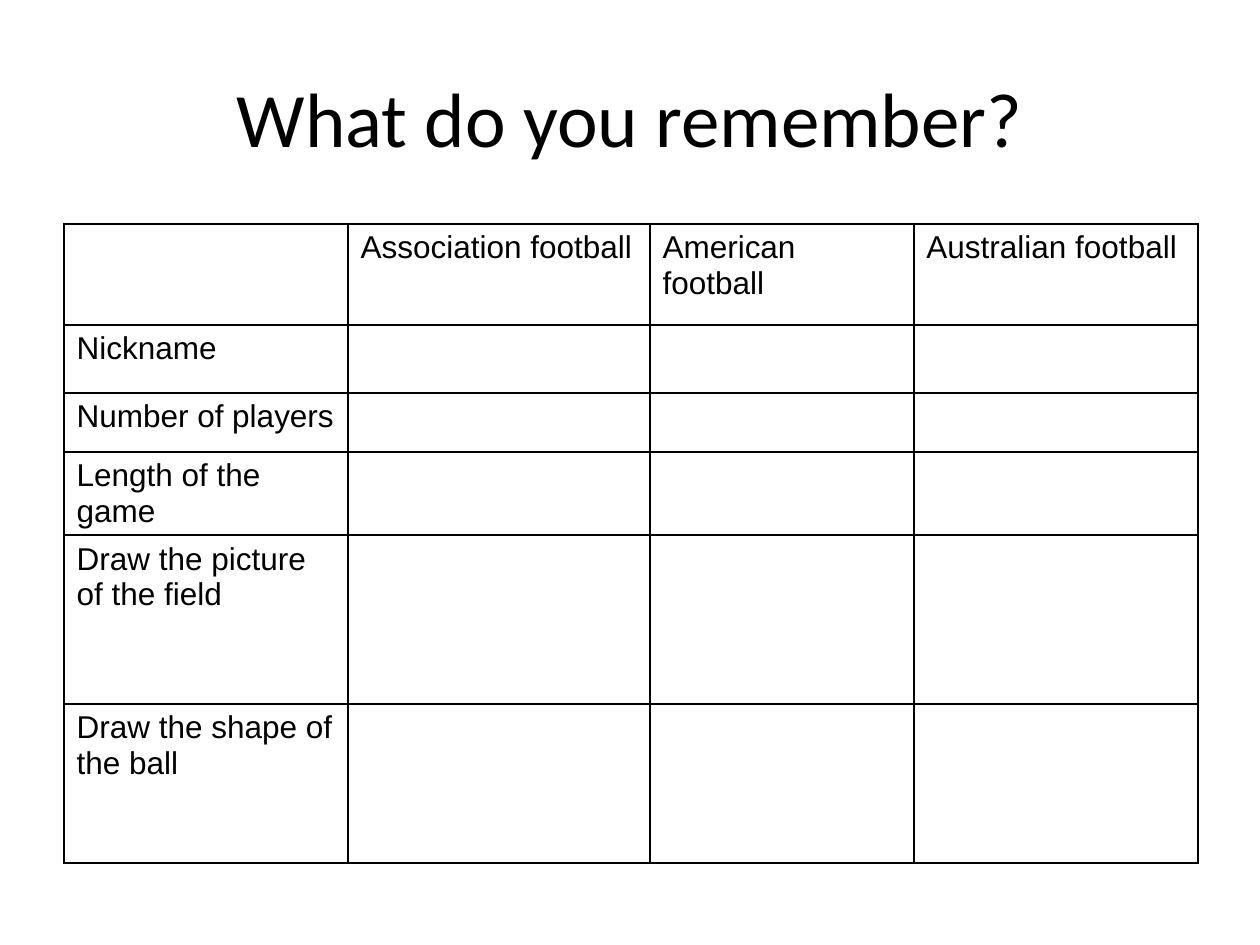
from lxml.etree import SubElement
from pptx import Presentation
from pptx.dml.color import RGBColor
from pptx.enum.text import MSO_ANCHOR, PP_ALIGN
from pptx.oxml.ns import qn
from pptx.util import Emu, Pt

SCALE = 914400 / 126
INK = "000000"
PAPER = "FFFFFF"
HEADS = ["", "Association football", "American football", "Australian football"]
LABELS = ["Nickname", "Number of players", "Length of the game",
          "Draw the picture of the field", "Draw the shape of the ball"]
WIDTHS = [284, 302, 264, 284]
HEIGHTS = [101, 68, 59, 59, 169, 159]


def px(count):
    return Emu(round(count * SCALE))


def color(code):
    return RGBColor.from_string(code)


def apply(item, values):
    for name, value in values.items():
        setattr(item, name, value)


class Deck:
    title_font = {"name": "Calibri", "size": Pt(44)}
    cell_font = {"name": "Arial", "size": Pt(18), "bold": False}
    line = Pt(1)

    def __init__(self, wide, high):
        self.file = Presentation()
        apply(self.file, {"slide_width": px(wide), "slide_height": px(high)})
        self.slide = self.file.slides.add_slide(self.file.slide_layouts[5])

    def label(self, frame, text, font):
        para = frame.paragraphs[0]
        para.text = text
        apply(para.font, font)
        for run in para.runs:
            apply(run.font, font)
            run.font.color.rgb = color(INK)
        return para

    def title(self, text, left, top, wide, high):
        shape = self.slide.shapes.title
        apply(shape, {"left": px(left), "top": px(top),
                      "width": px(wide), "height": px(high)})
        frame = shape.text_frame
        apply(frame, {"word_wrap": True, "vertical_anchor": MSO_ANCHOR.MIDDLE})
        self.label(frame, text, self.title_font).alignment = PP_ALIGN.CENTER

    def border(self, cell):
        props = cell._tc.get_or_add_tcPr()
        for side in ("lnL", "lnR", "lnT", "lnB"):
            edge = SubElement(props, qn(f"a:{side}"), w=str(self.line))
            fill = SubElement(edge, qn("a:solidFill"))
            SubElement(fill, qn("a:srgbClr"), val=INK)

    def table(self, rows, left, top, widths, heights):
        grid = self.slide.shapes.add_table(
            len(heights), len(widths), px(left), px(top),
            px(sum(widths)), px(sum(heights))).table
        apply(grid, {"first_row": False, "horz_banding": False})
        for col, wide in zip(grid.columns, widths):
            col.width = px(wide)
        for row, high, texts in zip(grid.rows, heights, rows):
            row.height = px(high)
            for cell, text in zip(row.cells, texts):
                self.label(cell.text_frame, text, self.cell_font)
                self.border(cell)
                cell.fill.solid()
                cell.fill.fore_color.rgb = color(PAPER)


def main():
    deck = Deck(1260, 945)
    deck.title("What do you remember?", 63, 38, 1134, 157)
    blanks = [""] * (len(HEADS) - 1)
    rows = [HEADS] + [[name] + blanks for name in LABELS]
    deck.table(rows, 64, 224, WIDTHS, HEIGHTS)
    deck.file.save("out.pptx")


if __name__ == "__main__":
    main()
